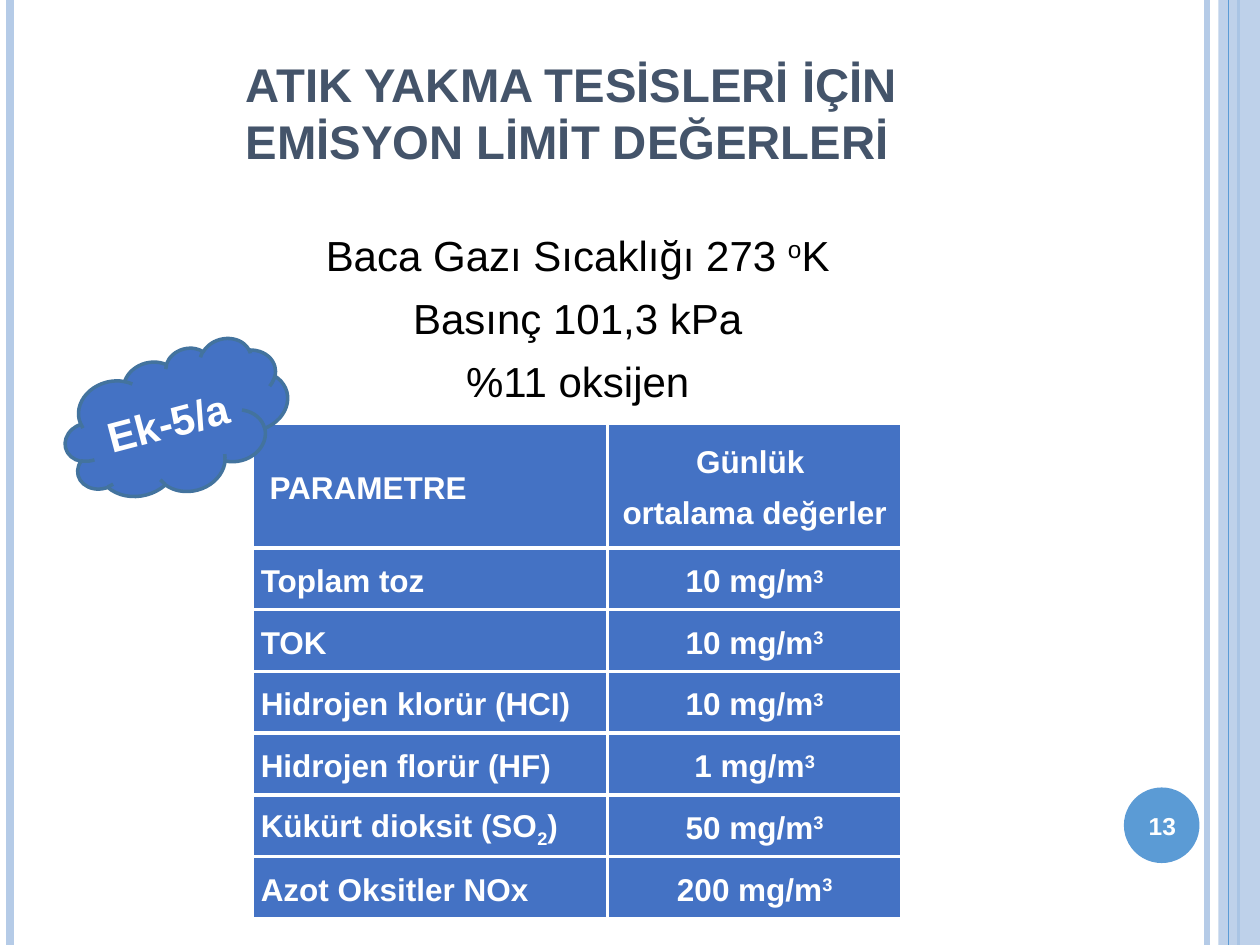
from typing import NamedTuple
from lxml.etree import SubElement
from pptx import Presentation
from pptx.dml.color import RGBColor
from pptx.enum.shapes import MSO_CONNECTOR, MSO_SHAPE
from pptx.enum.text import MSO_ANCHOR, PP_ALIGN
from pptx.oxml.ns import qn
from pptx.util import Inches, Pt

COLORS = {"pale": "B5CBE7", "sky": "5B9BD5", "blue": "4472C4", "edge": "43739E",
          "title": "44546A", "white": "FFFFFF", "black": "000000"}


class Rule(NamedTuple):
    x: float
    color: str
    width: float


class Part(NamedTuple):
    text: str
    base: int = 0


class Limit(NamedTuple):
    name: list[Part]
    value: str


BACK_RULES = [Rule(9.58, "pale", 3), Rule(0.08, "pale", 4.5), Rule(9.83, "sky", 1.5)]
FRONT_RULE = Rule(9.75, "sky", 0.75)
CONDITIONS = [[Part("Baca Gazı Sıcaklığı 273 "), Part("o", 30), Part("K")],
              [Part("Basınç 101,3 kPa")], [Part("%11 oksijen")]]
LIMITS = [Limit([Part("Toplam toz")], "10"),
          Limit([Part("TOK")], "10"),
          Limit([Part("Hidrojen klorür (HCI)")], "10"),
          Limit([Part("Hidrojen florür (HF)")], "1"),
          Limit([Part("Kükürt dioksit (SO"), Part("2", -25), Part(")")], "50"),
          Limit([Part("Azot Oksitler NOx")], "200")]


def rgb(name: str) -> RGBColor:
    """Look up a palette colour."""
    return RGBColor.from_string(COLORS[name])


def add_text(tf, paras: list[list[Part]], size: float, color: str, bold: bool = True,
             align=PP_ALIGN.CENTER, before: float = 0, after: float = 0,
             spacing: float = 1.0) -> None:
    """Fill a text frame run by run."""
    tf.word_wrap = True
    for i, parts in enumerate(paras):
        p = tf.add_paragraph() if i else tf.paragraphs[0]
        p.alignment, p.line_spacing = align, spacing
        p.space_before, p.space_after = Pt(before if i else 0), Pt(after)
        for part in parts:
            r = p.add_run()
            r.text = part.text
            r.font.name, r.font.size, r.font.bold = "Arial", Pt(size), bold
            r.font.color.rgb = rgb(color)
            if part.base:
                r.font._element.set("baseline", str(part.base * 1000))


def add_rule(s, rule: Rule) -> None:
    """Draw a full-height vertical line."""
    x = Inches(rule.x)
    line = s.shapes.add_connector(MSO_CONNECTOR.STRAIGHT, x, 0, x, Inches(7.5))
    line.line.color.rgb, line.line.width = rgb(rule.color), Pt(rule.width)
    SubElement(line._element.spPr, qn("a:effectLst"))


def add_solid(s, kind, box: tuple, color: str):
    """Draw a filled shape without outline or shadow."""
    sp = s.shapes.add_shape(kind, *map(Inches, box))
    sp.shadow.inherit = False
    sp.fill.solid()
    sp.fill.fore_color.rgb = rgb(color)
    sp.line.fill.background()
    return sp


def fill_cell(cell, paras: list[list[Part]], align) -> None:
    """Write and style one table cell with white borders."""
    cell.margin_left = cell.margin_right = Inches(0.07)
    cell.margin_top = cell.margin_bottom = 0
    cell.vertical_anchor = MSO_ANCHOR.MIDDLE
    add_text(cell.text_frame, paras, 18, "white", align=align,
             before=3, after=3, spacing=1.15)
    tc_pr = cell._tc.get_or_add_tcPr()
    for side in ("lnL", "lnR", "lnT", "lnB"):
        ln = SubElement(tc_pr, qn(f"a:{side}"), w=str(Pt(2.25)))
        SubElement(SubElement(ln, qn("a:solidFill")), qn("a:srgbClr"), val=COLORS["white"])
    cell.fill.solid()
    cell.fill.fore_color.rgb = rgb("blue")


def add_limits(s) -> None:
    """Build the emission limit table."""
    rows = [([[Part("\u00a0PARAMETRE")]], [[Part("Günlük ")], [Part("ortalama değerler")]])]
    rows += [([lim.name], [[Part(f"{lim.value} mg/m"), Part("3", 30)]]) for lim in LIMITS]
    table = s.shapes.add_table(len(rows), 2, Inches(2), Inches(3.36),
                               Inches(5.16), Inches(3.95)).table
    for col, width in zip(table.columns, (2.82, 2.34)):
        col.width = Inches(width)
    for i, (name, value) in enumerate(rows):
        table.rows[i].height = Inches(0.49 if i else 0.99)
        fill_cell(table.cell(i, 0), name, PP_ALIGN.LEFT)
        fill_cell(table.cell(i, 1), value, PP_ALIGN.CENTER)


def main() -> None:
    """Build the slide and save it."""
    prs = Presentation()
    prs.slide_width, prs.slide_height = Inches(10), Inches(7.5)
    s = prs.slides.add_slide(prs.slide_layouts[5])

    for rule in BACK_RULES:
        add_rule(s, rule)
    band = add_solid(s, MSO_SHAPE.RECTANGLE, (9.67, 0, 0.33, 7.5), "pale")
    SubElement(band._element.spPr.find(qn("a:solidFill"))[0], qn("a:alpha"), val="87000")
    add_rule(s, FRONT_RULE)

    add_solid(s, MSO_SHAPE.OVAL, (8.92, 6.25, 0.6, 0.6), "sky")
    number = s.shapes.add_textbox(*map(Inches, (8.89, 6.27, 0.67, 0.57))).text_frame
    number.vertical_anchor = MSO_ANCHOR.MIDDLE
    add_text(number, [[Part("13")]], 14, "white")

    body = s.shapes.add_textbox(*map(Inches, (0.5, 1.75, 8.17, 5.33))).text_frame
    add_text(body, CONDITIONS, 24, "black", bold=False, before=6, spacing=1.05)

    title = s.shapes.title
    title.left, title.top, title.width, title.height = map(Inches, (1.85, 0.44, 6.82, 0.95))
    title.text_frame.vertical_anchor = MSO_ANCHOR.BOTTOM
    add_text(title.text_frame, [[Part("ATIK YAKMA TESİSLERİ İÇİN EMİSYON LİMİT DEĞERLERİ")]],
             27, "title", align=PP_ALIGN.LEFT)

    add_limits(s)

    cloud = add_solid(s, MSO_SHAPE.CLOUD, (0.5, 2.8, 1.81, 1.11), "blue")
    cloud.rotation = 345.2
    cloud.line.color.rgb, cloud.line.width = rgb("edge"), Pt(2)
    cloud.text_frame.vertical_anchor = MSO_ANCHOR.MIDDLE
    add_text(cloud.text_frame, [[Part("Ek-5/a")]], 24, "white")

    prs.save("out.pptx")


if __name__ == "__main__":
    main()
